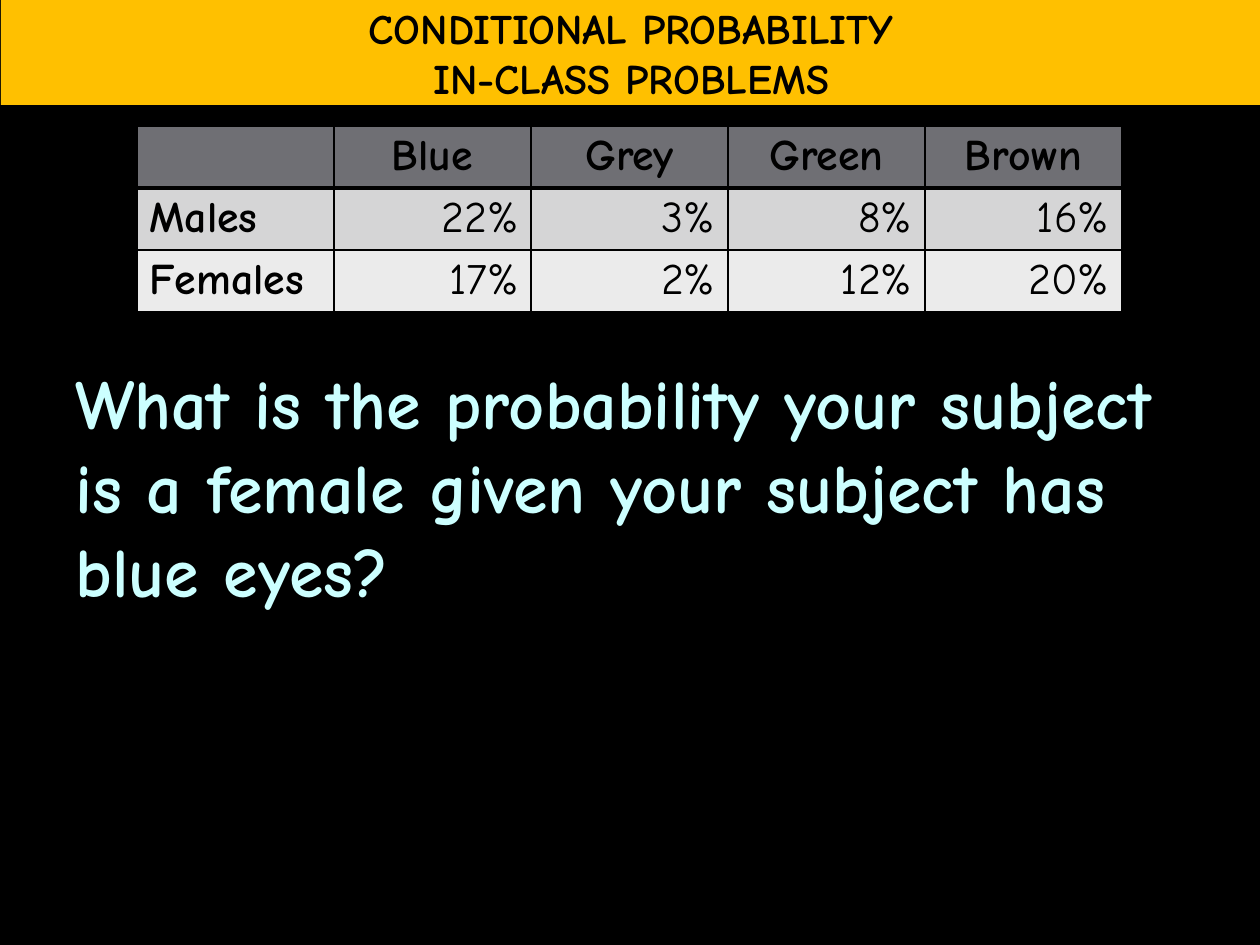
from lxml.etree import SubElement
from pptx import Presentation
from pptx.dml.color import RGBColor
from pptx.enum.text import MSO_ANCHOR, MSO_AUTO_SIZE, PP_ALIGN
from pptx.oxml.ns import qn
from pptx.util import Pt

TITLE = ["CONDITIONAL PROBABILITY", "IN-CLASS PROBLEMS"]
QUESTION = "What is the probability your subject is a female given your subject has blue eyes?"
EYE_COLOURS = [
    ["", "Blue", "Grey", "Green", "Brown"],
    ["Males", "22%", "3%", "8%", "16%"],
    ["Females", "17%", "2%", "12%", "20%"],
]
ROW_FILLS = ["6F6F74", "D5D5D6", "EBEBEB"]
FONT = "Comic Neue"
BLACK = "000000"
COL_W, ROW_H = 197, 62


def px(n):
    return round(n * 914400 / 126)


def rgb(value):
    return RGBColor.from_string(value)


def write(tf, lines, size, color=BLACK, bold=True, align=PP_ALIGN.LEFT):
    for i, line in enumerate(lines):
        p = tf.paragraphs[0] if i == 0 else tf.add_paragraph()
        p.alignment = align
        r = p.add_run()
        r.text = line
        r.font.name = FONT
        r.font.size = Pt(size)
        r.font.bold = bold
        r.font.color.rgb = rgb(color)


def fill(target, color):
    target.fill.solid()
    target.fill.fore_color.rgb = rgb(color)


def add_borders(cell, **widths):
    tcPr = cell._tc.get_or_add_tcPr()
    for position, (side, width) in enumerate(widths.items()):
        ln = SubElement(tcPr, qn(f"a:ln{side}"), w=str(Pt(width)))
        solid = SubElement(ln, qn("a:solidFill"))
        SubElement(solid, qn("a:srgbClr"), val=BLACK)
        tcPr.insert(position, ln)


def place(sp, left, top, width, height):
    sp.left, sp.top, sp.width, sp.height = map(px, (left, top, width, height))


def add_title(s):
    sp = s.shapes.title
    place(sp, 1, 0, 1260, 105)
    fill(sp, "FFC000")
    tf = sp.text_frame
    tf.auto_size = MSO_AUTO_SIZE.NONE
    tf.word_wrap = False
    tf.vertical_anchor = MSO_ANCHOR.MIDDLE
    tf.margin_top = tf.margin_bottom = 0
    write(tf, TITLE, 24, align=PP_ALIGN.CENTER)


def add_eye_table(s):
    rows, cols = len(EYE_COLOURS), len(EYE_COLOURS[0])
    table = s.shapes.add_table(rows, cols, px(137), px(126),
                               px(COL_W * cols), px(ROW_H * rows)).table
    for i, row in enumerate(EYE_COLOURS):
        for j, text in enumerate(row):
            cell = table.cell(i, j)
            fill(cell, ROW_FILLS[i])
            cell.margin_top = cell.margin_bottom = px(5)
            header, label = i == 0, j == 0
            align = (PP_ALIGN.CENTER if header else
                     PP_ALIGN.LEFT if label else PP_ALIGN.RIGHT)
            write(cell.text_frame, [text], 25, bold=header or label, align=align)
            add_borders(cell, L=1, R=1, T=3 if i == 1 else 1, B=3 if header else 1)


def add_question(s):
    sp = s.shapes.add_textbox(px(63), px(353), px(1134), px(270))
    sp.text_frame.word_wrap = True
    write(sp.text_frame, [QUESTION], 40, color="CCFFFF")


def main():
    prs = Presentation()
    prs.slide_width, prs.slide_height = px(1260), px(945)
    s = prs.slides.add_slide(prs.slide_layouts[5])
    fill(s.background, BLACK)
    add_title(s)
    add_eye_table(s)
    add_question(s)
    prs.save("out.pptx")


if __name__ == "__main__":
    main()
